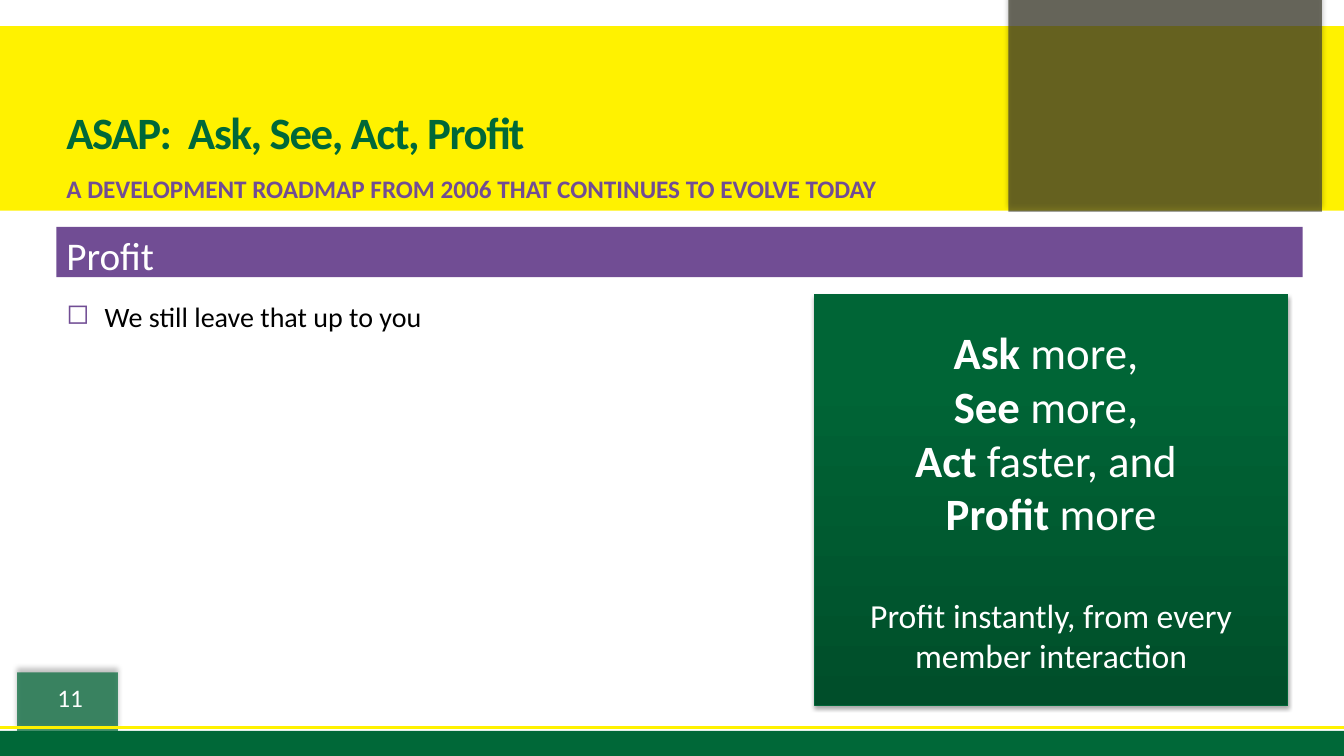
from lxml.etree import SubElement as Sub
from pptx import Presentation
from pptx.dml.color import RGBColor as RGB
from pptx.enum.shapes import MSO_CONNECTOR as Link, MSO_SHAPE as Shape
from pptx.enum.text import MSO_ANCHOR as Anchor, PP_ALIGN as Align
from pptx.oxml.ns import qn
from pptx.util import Inches, Pt

GREEN = RGB(0x00, 0x68, 0x38)
EDGE = RGB(0x00, 0x66, 0x37)
YELLOW = RGB(0xFF, 0xF2, 0x00)
PURPLE = RGB(0x71, 0x4D, 0x94)
OLIVE = RGB(0x3E, 0x3D, 0x2D)
WHITE = RGB(0xFF, 0xFF, 0xFF)
BLACK = RGB(0x00, 0x00, 0x00)

WIDE, HIGH = 13.33, 7.5
LEFT = 0.56
GLOW = (4, 3, 270)
DROP = (3.1, 1.8, 90)
FADE = [(0, "004E2A"), (80, "006536"), (100, "006537")]

BLOCKS = [
    ((0, 7.25, WIDE, 0.25), GREEN, None, None),
    ((0, 0.26, WIDE, 1.83), YELLOW, None, None),
    ((10, 0, 3.11, 2.1), OLIVE, 70, GLOW),
    ((0.17, 6.67, 1, 0.58), GREEN, 70, GLOW),
]
TEXTS = [
    ((LEFT, 1.67, 12, 0.42), "A DEVELOPMENT ROADMAP FROM 2006 THAT CONTINUES TO EVOLVE TODAY",
     {"size": Pt(18), "bold": True}, PURPLE, {}),
    ((LEFT, 0.92, 9.22, 0.7), "ASAP:  Ask, See, Act, Profit",
     {"size": Pt(32), "bold": True}, GREEN, {"anchor": Anchor.BOTTOM, "track": -100}),
    ((0.25, 6.72, 0.89, 0.4), "11", {"size": Pt(18)}, WHITE, {"align": Align.CENTER}),
    ((LEFT, 2.92, 7.28, 3.33), "We still leave that up to you",
     {"size": Pt(20)}, BLACK, {"bullet": "◻"}),
    ((LEFT, 2.25, 12.36, 0.5), "Profit", {"size": Pt(28)}, WHITE, {"fill": PURPLE}),
]
CARD = (8.08, 2.92, 4.69, 4.08)
STEPS = [("Ask", " more, "), ("See", " more, "), ("Act", " faster, and "), ("Profit", " more")]
CLOSE = "Profit instantly, from every member interaction"

deck = Presentation()
deck.slide_width, deck.slide_height = Inches(WIDE), Inches(HIGH)
slide = deck.slides.add_slide(deck.slide_layouts[6])


def style(font, color, values):
    font.name = "Calibri"
    font.color.rgb = color
    for key, value in values.items():
        setattr(font, key, value)


def shade(shape, blur, dist, turn):
    effects = shape._element.spPr.find(qn("a:effectLst"))
    shadow = Sub(effects, qn("a:outerShdw"), blurRad=str(Pt(blur)), dist=str(Pt(dist)),
                 dir=str(turn * 60000), algn="ctr", rotWithShape="0")
    color = Sub(shadow, qn("a:srgbClr"), val="000000")
    Sub(color, qn("a:alpha"), val="35000")


def block(place, color, alpha=None, shadow=None):
    shape = slide.shapes.add_shape(Shape.RECTANGLE, *map(Inches, place))
    shape.shadow.inherit = False
    shape.fill.solid()
    shape.fill.fore_color.rgb = color
    shape.line.fill.background()
    if alpha:
        tint = shape._element.spPr.find(".//" + qn("a:srgbClr"))
        Sub(tint, qn("a:alpha"), val=str(alpha * 1000))
    if shadow:
        shade(shape, *shadow)
    return shape


def label(place, text, values, color, extra):
    if "fill" in extra:
        box = block(place, extra["fill"])
    else:
        box = slide.shapes.add_textbox(*map(Inches, place))
    frame = box.text_frame
    frame.word_wrap = True
    frame.vertical_anchor = extra.get("anchor", Anchor.TOP)
    para = frame.paragraphs[0]
    para.alignment = extra.get("align", Align.LEFT)
    if "bullet" in extra:
        props = para._p.get_or_add_pPr()
        props.set("marL", str(Inches(0.38)))
        props.set("indent", str(-Inches(0.38)))
        Sub(Sub(props, qn("a:buClr")), qn("a:srgbClr"), val=str(PURPLE))
        Sub(props, qn("a:buChar"), char=extra["bullet"])
    run = para.add_run()
    run.text = text
    style(run.font, color, values)
    if "track" in extra:
        run._r.get_or_add_rPr().set("spc", str(extra["track"]))


def card():
    shape = block(CARD, GREEN, shadow=DROP)
    shape.line.color.rgb = EDGE
    shape.line.width = Pt(0.75)
    props = shape._element.spPr
    solid = props.find(qn("a:solidFill"))
    grad = Sub(props, qn("a:gradFill"), rotWithShape="1")
    props.replace(solid, grad)
    stops = Sub(grad, qn("a:gsLst"))
    for spot, color in FADE:
        Sub(Sub(stops, qn("a:gs"), pos=str(spot * 1000)), qn("a:srgbClr"), val=color)
    Sub(grad, qn("a:lin"), ang=str(270 * 60000), scaled="0")
    frame = shape.text_frame
    frame.word_wrap = True
    frame.vertical_anchor = Anchor.MIDDLE
    para = frame.paragraphs[0]
    para.alignment = Align.CENTER
    for row, step in enumerate(STEPS):
        if row:
            para.add_line_break()
        for text, bold in zip(step, (True, False)):
            run = para.add_run()
            run.text = text
            style(run.font, WHITE, {"size": Pt(32), "bold": bold})
    last = frame.add_paragraph()
    last.alignment = Align.CENTER
    last.space_before = Pt(39)
    run = last.add_run()
    run.text = CLOSE
    style(run.font, WHITE, {"size": Pt(24)})


for item in BLOCKS:
    block(*item)
rule = slide.shapes.add_connector(Link.STRAIGHT, 0, Inches(7.22), Inches(WIDE), Inches(7.22))
rule.line.color.rgb = YELLOW
rule.line.width = Pt(2.25)
Sub(rule._element.spPr, qn("a:effectLst"))
for item in TEXTS:
    label(*item)
card()
deck.save("out.pptx")
